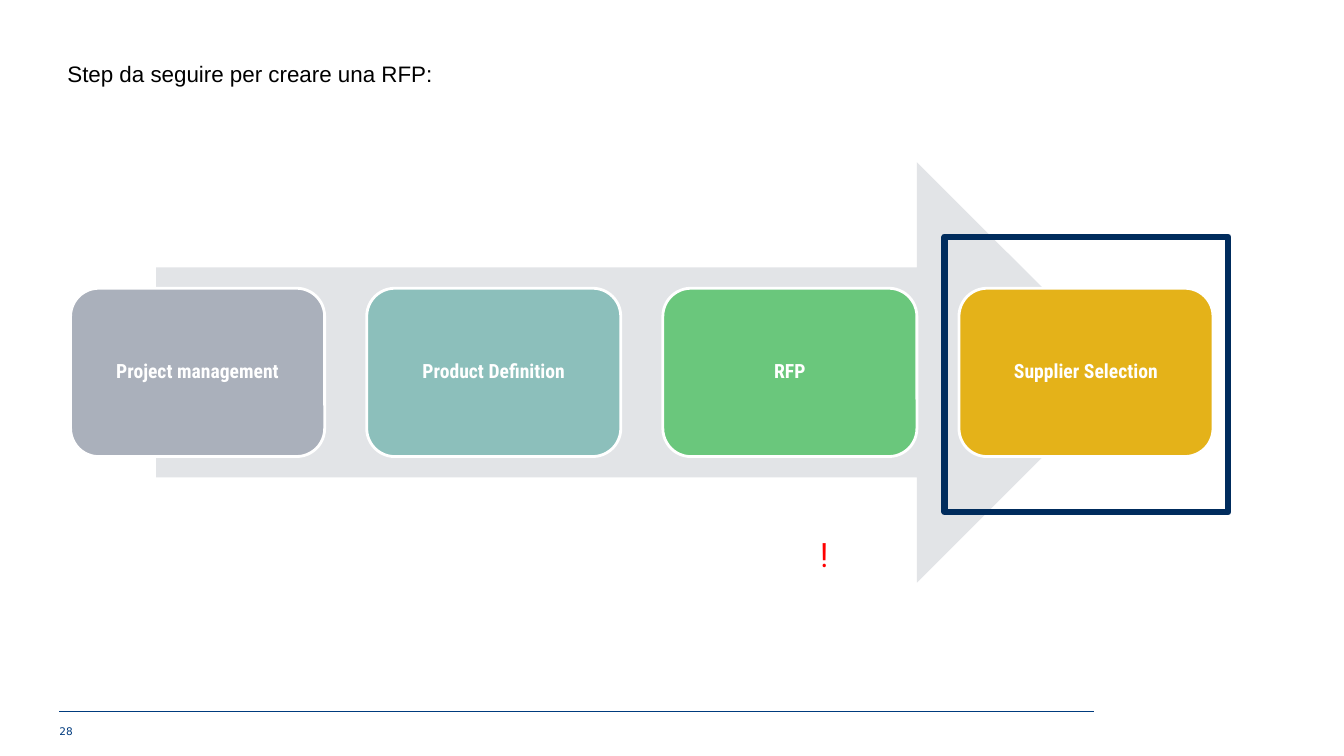
from dataclasses import dataclass

from lxml import etree
from pptx import Presentation
from pptx.dml.color import RGBColor
from pptx.enum.shapes import MSO_CONNECTOR, MSO_SHAPE
from pptx.enum.text import MSO_ANCHOR, PP_ALIGN
from pptx.oxml.ns import qn
from pptx.util import Inches, Pt


@dataclass(frozen=True)
class Theme:
    title_font: str = "Arial"
    step_font: str = "Roboto Condensed"
    number_font: str = "DejaVu Sans"
    title_size: float = 16
    step_size: float = 14
    mark_size: float = 24
    number_size: float = 7.5
    black: str = "000000"
    white: str = "FFFFFF"
    red: str = "FF0000"
    footer: str = "003B7E"
    frame: str = "002C5D"
    arrow: str = "E2E4E7"


THEME = Theme()
STEPS = [
    ("Project management", "AAB0BB"),
    ("Product Definition", "8CBFBB"),
    ("RFP", "6AC77C"),
    ("Supplier Selection", "E4B219"),
]
STEP_LEFT, STEP_PITCH = 0.7, 2.937


def rgb(value):
    return RGBColor.from_string(value)


def write(tf, text, font, size, color, align=PP_ALIGN.LEFT, bold=False, inset=None):
    tf.word_wrap = True
    if inset is not None:
        tf.margin_left = tf.margin_right = Inches(inset)
        tf.margin_top = tf.margin_bottom = Inches(inset)
    tf.text = text
    p = tf.paragraphs[0]
    p.alignment = align
    r = p.runs[0]
    r.font.name = font
    r.font.size = Pt(size)
    r.font.bold = bold
    r.font.color.rgb = rgb(color)
    return p


def add_text(s, box, *args, **kwargs):
    sp = s.shapes.add_textbox(*map(Inches, box))
    write(sp.text_frame, *args, **kwargs)


def add_block(s, kind, box, fill=None, line=None, width=0):
    sp = s.shapes.add_shape(kind, *map(Inches, box))
    sp.shadow.inherit = False
    if fill:
        sp.fill.solid()
        sp.fill.fore_color.rgb = rgb(fill)
    else:
        sp.fill.background()
    if line:
        sp.line.color.rgb = rgb(line)
        sp.line.width = Pt(width)
    else:
        sp.line.fill.background()
    return sp


def add_step(s, index, label, color):
    box = (STEP_LEFT + index * STEP_PITCH, 2.86, 2.52, 1.67)
    sp = add_block(s, MSO_SHAPE.ROUNDED_RECTANGLE, box, color, THEME.white, 2)
    tf = sp.text_frame
    p = write(tf, label, THEME.step_font, THEME.step_size, THEME.white,
              PP_ALIGN.CENTER, bold=True, inset=0.06)
    p.line_spacing = 0.9
    tf.vertical_anchor = MSO_ANCHOR.MIDDLE


def add_rule(s, x1, x2, y):
    rule = s.shapes.add_connector(
        MSO_CONNECTOR.STRAIGHT, Inches(x1), Inches(y), Inches(x2), Inches(y))
    rule.line.color.rgb = rgb(THEME.footer)
    rule.line.width = Pt(0.5)
    etree.SubElement(rule._element.spPr, qn("a:effectLst"))


def main():
    prs = Presentation()
    prs.slide_width, prs.slide_height = Inches(13.33), Inches(7.5)
    s = prs.slides.add_slide(prs.slide_layouts[6])

    add_rule(s, 0.59, 10.85, 7.06)
    add_text(s, (0.59, 7.19, 0.23, 0.24), "28", THEME.number_font,
             THEME.number_size, THEME.footer, inset=0)
    add_text(s, (7.77, 5.25, 0.81, 0.5), "!", THEME.step_font,
             THEME.mark_size, THEME.red, PP_ALIGN.CENTER)
    add_block(s, MSO_SHAPE.RIGHT_ARROW, (1.55, 1.61, 9.63, 4.17), THEME.arrow)
    for index, (label, color) in enumerate(STEPS):
        add_step(s, index, label, color)
    add_text(s, (0.57, 0.55, 10.12, 0.57), "Step da seguire per creare una RFP:",
             THEME.title_font, THEME.title_size, THEME.black)
    add_block(s, MSO_SHAPE.RECTANGLE, (9.37, 2.35, 2.81, 2.73),
              line=THEME.frame, width=4.75)

    prs.save("out.pptx")


if __name__ == "__main__":
    main()
